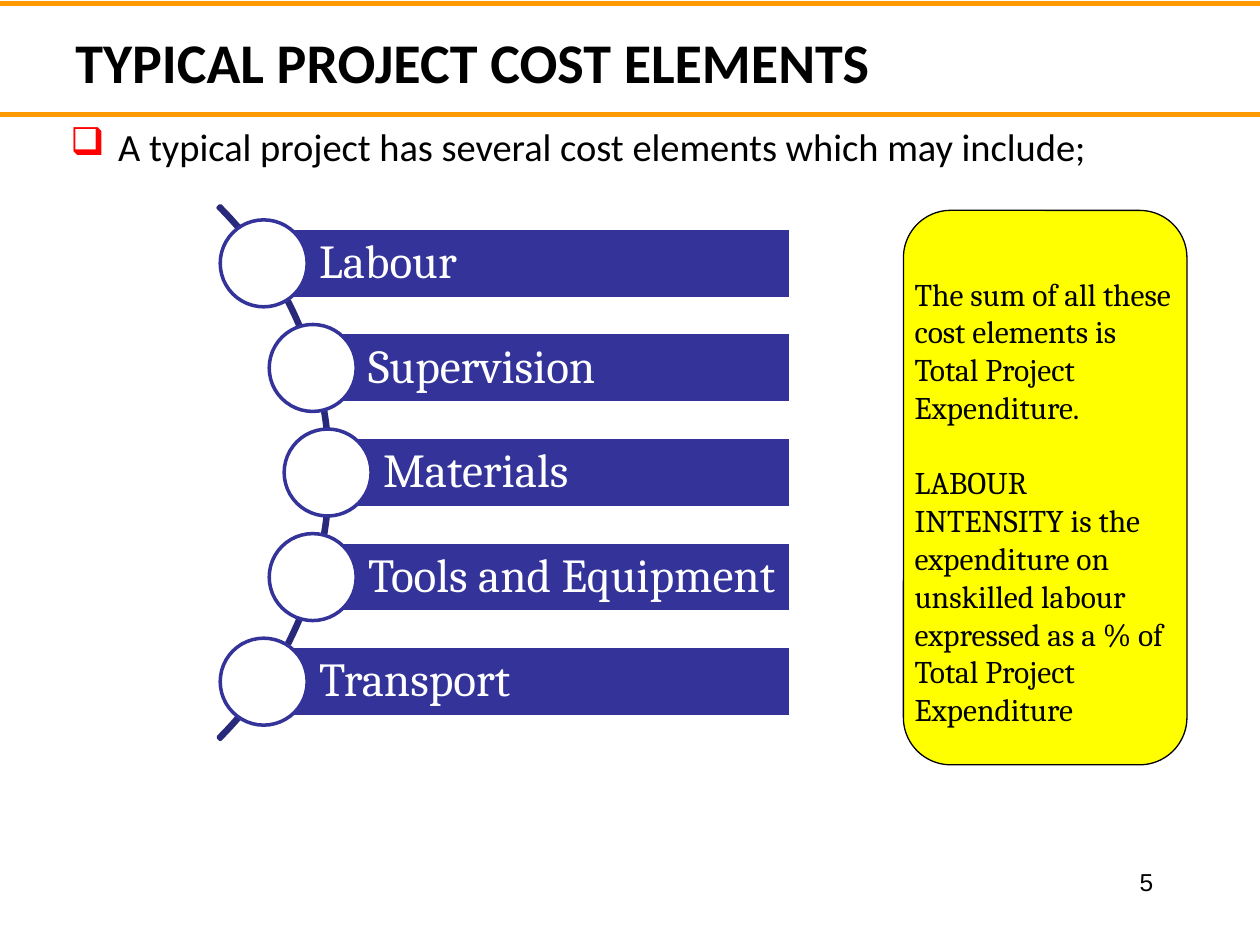
"""Build a slide on the typical cost elements of a project."""
import math

import lxml.etree
import pptx
import pptx.dml.color
import pptx.enum.shapes
import pptx.enum.text
import pptx.oxml.ns
import pptx.util

Inches = pptx.util.Inches
Pt = pptx.util.Pt
RGBColor = pptx.dml.color.RGBColor
Shape = pptx.enum.shapes.MSO_SHAPE
Align = pptx.enum.text.PP_ALIGN
Anchor = pptx.enum.text.MSO_ANCHOR

BLACK = RGBColor(0x00, 0x00, 0x00)
WHITE = RGBColor(0xFF, 0xFF, 0xFF)
ORANGE = RGBColor(0xFF, 0x99, 0x00)
NAVY = RGBColor(0x29, 0x29, 0x7B)
INDIGO = RGBColor(0x33, 0x33, 0x99)
YELLOW = RGBColor(0xFF, 0xFF, 0x00)
RED = RGBColor(0xFF, 0x00, 0x00)

COST_ELEMENTS = ["Labour", "Supervision", "Materials", "Tools and Equipment", "Transport"]
ARC_CENTRE_X, ARC_CENTRE_Y, ARC_SIZE = -0.37, 3.75, 5.99
CIRCLE_TRACK, CIRCLE_SIZE = 2.97, 0.69
BAR_STEP, BAR_HEIGHT, BAR_RIGHT = 0.83, 0.56, 6.28
BAR_MARGINS = {"margin_left": Inches(0.44), "margin_right": Inches(0.07),
               "margin_top": Inches(0.07), "margin_bottom": Inches(0.07),
               "vertical_anchor": Anchor.MIDDLE}


def set_values(target, values):
    """Set each attribute named in values."""
    for name, value in values.items():
        setattr(target, name, value)


def add_element(parent, tag, **attributes):
    """Append a DrawingML element to parent."""
    return lxml.etree.SubElement(parent, pptx.oxml.ns.qn(tag), attributes)


def write_text(frame, paragraphs, font, colour=BLACK, para_format=None, frame_format=None):
    """Fill a text frame with equally formatted paragraphs."""
    set_values(frame, {"word_wrap": True, **(frame_format or {})})
    for index, text in enumerate(paragraphs):
        para = frame.add_paragraph() if index else frame.paragraphs[0]
        set_values(para, {"alignment": Align.LEFT, **(para_format or {})})
        span = para.add_run()
        span.text = text
        set_values(span.font, font)
        span.font.color.rgb = colour


def add_text(slide, bounds, paragraphs, font, **formats):
    """Add a wrapping text box and return it."""
    box = slide.shapes.add_textbox(*map(Inches, bounds))
    write_text(box.text_frame, paragraphs, font, **formats)
    return box


def add_bullet(para, character, colour):
    """Give a paragraph a coloured bullet with a hanging indent."""
    properties = para._p.get_or_add_pPr()
    set_indent = {"marL": Inches(0.38), "indent": Inches(-0.38)}
    for name, value in set_indent.items():
        properties.set(name, str(int(value)))
    add_element(add_element(properties, "a:buClr"), "a:srgbClr", val=str(colour))
    add_element(properties, "a:buChar", char=character)


def add_shape(slide, kind, bounds, fill, line, width):
    """Add a shape without shadow; a fill of None leaves it open."""
    shape = slide.shapes.add_shape(kind, *map(Inches, bounds))
    shape.shadow.inherit = False
    if fill is None:
        shape.fill.background()
    else:
        shape.fill.solid()
        shape.fill.fore_color.rgb = fill
    shape.line.color.rgb = line
    shape.line.width = Pt(width)
    return shape


def add_rule(slide, y):
    """Draw an orange rule across the slide."""
    rule = slide.shapes.add_connector(pptx.enum.shapes.MSO_CONNECTOR.STRAIGHT,
                                      0, Inches(y), Inches(10), Inches(y))
    rule.line.color.rgb = ORANGE
    rule.line.width = Pt(3)
    add_element(rule._element.spPr, "a:effectLst")


def add_arc(slide):
    """Draw the thin arc that links the circles."""
    bounds = (ARC_CENTRE_X - ARC_SIZE / 2, ARC_CENTRE_Y - ARC_SIZE / 2, ARC_SIZE, ARC_SIZE)
    arc = add_shape(slide, Shape.BLOCK_ARC, bounds, None, NAVY, 2)
    for index, value in enumerate((189, 27, 0.004)):
        arc.adjustments[index] = value


def add_cost_element(slide, label, offset):
    """Add a labelled bar and its circle, offset down from the arc's centre."""
    x = ARC_CENTRE_X + math.sqrt(CIRCLE_TRACK ** 2 - offset ** 2)
    y = ARC_CENTRE_Y + offset
    bar = add_shape(slide, Shape.RECTANGLE,
                    (x, y - BAR_HEIGHT / 2, BAR_RIGHT - x, BAR_HEIGHT), INDIGO, WHITE, 2)
    write_text(bar.text_frame, [label], {"name": "Cambria", "size": Pt(27)}, colour=WHITE,
               para_format={"line_spacing": 0.9}, frame_format=BAR_MARGINS)
    radius = CIRCLE_SIZE / 2
    add_shape(slide, Shape.OVAL, (x - radius, y - radius, CIRCLE_SIZE, CIRCLE_SIZE),
              WHITE, INDIGO, 2)


def add_summary(slide):
    """Add the yellow panel and its explanation."""
    add_shape(slide, Shape.ROUNDED_RECTANGLE, (7.17, 1.67, 2.25, 4.4), YELLOW, BLACK, 0.75)
    paragraphs = [
        "The sum of all these cost elements is Total Project Expenditure.",
        "LABOUR INTENSITY is the expenditure on unskilled labour expressed as a % of "
        "Total Project Expenditure",
    ]
    box = add_text(slide, (7.16, 2.13, 2.25, 3.74), paragraphs,
                   {"name": "Cambria", "size": Pt(18)})
    box.text_frame.paragraphs[0].space_after = Pt(21.5)


def main():
    """Build and save the deck."""
    deck = pptx.Presentation()
    set_values(deck, {"slide_width": Inches(10), "slide_height": Inches(7.5)})
    slide = deck.slides.add_slide(deck.slide_layouts[6])
    add_text(slide, (7.17, 6.83, 2.08, 0.5), ["5"], {"name": "Arial", "size": Pt(14)},
             para_format={"alignment": Align.RIGHT})
    for y in (0.03, 0.91):
        add_rule(slide, y)
    add_text(slide, (0.5, 0.17, 9.15, 0.64), ["TYPICAL PROJECT COST ELEMENTS"],
             {"name": "Calibri", "size": Pt(32), "bold": True})
    body = add_text(slide, (0.46, 0.93, 9.18, 5.65),
                    ["A typical project has several cost elements which may include;"],
                    {"name": "Calibri", "size": Pt(22)},
                    para_format={"alignment": Align.JUSTIFY, "space_before": Pt(4.4)})
    add_bullet(body.text_frame.paragraphs[0], "❑", RED)
    add_arc(slide)
    middle = len(COST_ELEMENTS) // 2
    for index, label in enumerate(COST_ELEMENTS):
        add_cost_element(slide, label, (index - middle) * BAR_STEP)
    add_summary(slide)
    deck.save("out.pptx")


if __name__ == "__main__":
    main()
